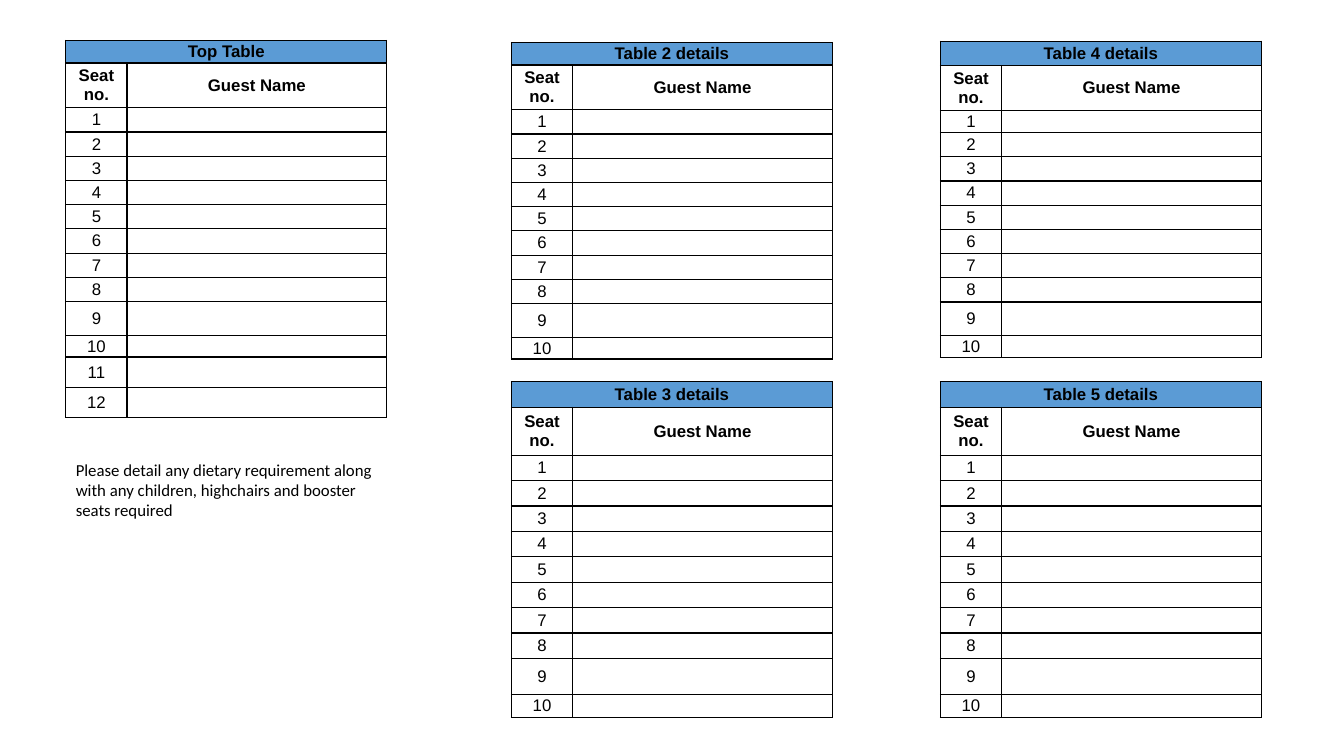
from lxml import etree
from pptx import Presentation, util as u
from pptx.dml.color import RGBColor
from pptx.enum import text
from pptx.oxml.ns import qn

COLORS = {"ink": "000000", "title": "5B9BD5"}
INK = RGBColor.from_string(COLORS["ink"])

deck = Presentation()
deck.slide_width, deck.slide_height = u.Cm(33.87), u.Cm(19.05)
page = deck.slides.add_slide(deck.slide_layouts[6])


def add_borders(cell):
    properties = cell._tc.get_or_add_tcPr()
    for side in ("lnL", "lnR", "lnT", "lnB"):
        line = etree.SubElement(properties, qn(f"a:{side}"), w=str(u.Pt(1)))
        fill = etree.SubElement(line, qn("a:solidFill"))
        etree.SubElement(fill, qn("a:srgbClr"), val=COLORS["ink"])


def write(cell, words, bold):
    cell.vertical_anchor = text.MSO_ANCHOR.MIDDLE
    for side in ("left", "right", "top", "bottom"):
        setattr(cell, f"margin_{side}", 0)
    para = cell.text_frame.paragraphs[0]
    para.alignment = text.PP_ALIGN.CENTER
    if words:
        span = para.add_run()
        span.text = words
        for key, value in {"size": u.Pt(12), "name": "Arial", "bold": bold}.items():
            setattr(span.font, key, value)
        span.font.color.rgb = INK
    else:
        # Keep blank rows as low as the numbered ones
        end = etree.SubElement(para._p, qn("a:endParaRPr"), sz="1200")
        etree.SubElement(end, qn("a:latin"), typeface="Arial")


# Row heights in cm: title, headings, then one per seat
upper_rows = [0.57, 1.13] + [0.61] * 8 + [0.85, 0.55]
fourth_rows = [0.61, 1.14, 0.55] + [0.61] * 7 + [0.85, 0.55]
lower_rows = [0.64, 1.21] + [0.64] * 8 + [0.91, 0.58]
column_widths = [1.54, 6.55]
left, middle, right = 1.66, 12.89, 23.7

# Seating tables
seating = [
    ("Top Table", left, 1.02, upper_rows + [0.76] * 2),
    ("Table 2 details", middle, 1.07, upper_rows),
    ("Table 3 details", middle, 9.62, lower_rows),
    ("Table 4 details", right, 1.04, fourth_rows),
    ("Table 5 details", right, 9.62, lower_rows),
]
for title, x, y, heights in seating:
    table = page.shapes.add_table(
        len(heights), 2, u.Cm(x), u.Cm(y), u.Cm(sum(column_widths)), u.Cm(sum(heights))).table
    table.first_row = table.horz_banding = False
    for column, width in zip(table.columns, column_widths):
        column.width = u.Cm(width)
    table.cell(0, 0).merge(table.cell(0, 1))

    seats = [(str(number), "") for number in range(1, len(heights) - 1)]
    contents = [(title, ""), ("Seat no.", "Guest Name")] + seats
    for index, (height, row_words) in enumerate(zip(heights, contents)):
        table.rows[index].height = u.Cm(height)
        for cell, words in zip(table.rows[index].cells, row_words):
            add_borders(cell)
            if cell.is_spanned:
                continue
            write(cell, words, bold=index < 2)
            if index == 0:
                cell.fill.solid()
                cell.fill.fore_color.rgb = RGBColor.from_string(COLORS["title"])
            else:
                cell.fill.background()

# Dietary note
box = page.shapes.add_textbox(u.Cm(left), u.Cm(11.46), u.Cm(8.08), u.Cm(2.39))
box.text_frame.word_wrap = True
box.text_frame.auto_size = text.MSO_AUTO_SIZE.SHAPE_TO_FIT_TEXT
span = box.text_frame.paragraphs[0].add_run()
span.text = ("Please detail any dietary requirement along with any children, "
             "highchairs and booster seats required")
for key, value in {"size": u.Pt(12), "name": "Calibri"}.items():
    setattr(span.font, key, value)
span.font.color.rgb = INK

deck.save("out.pptx")
